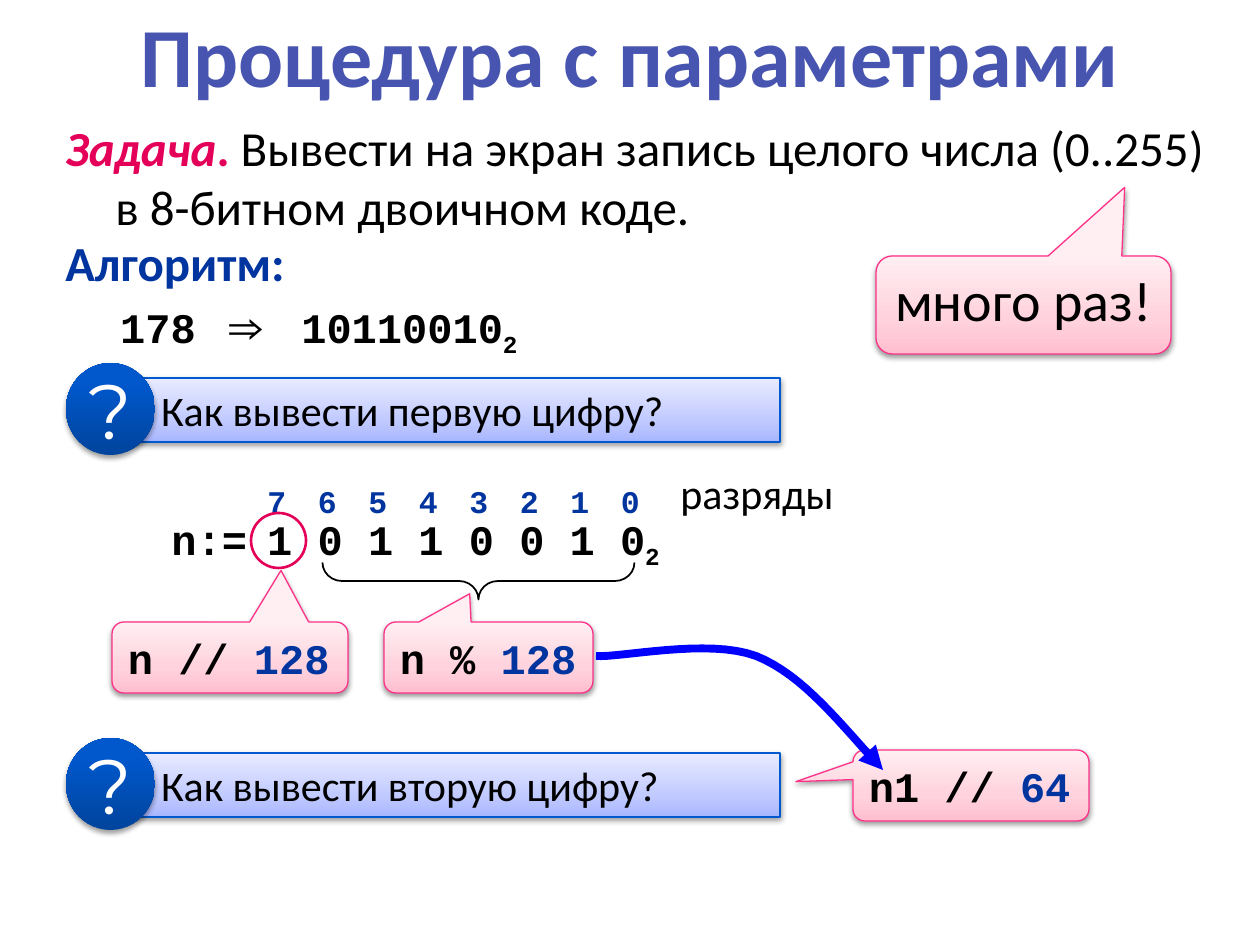
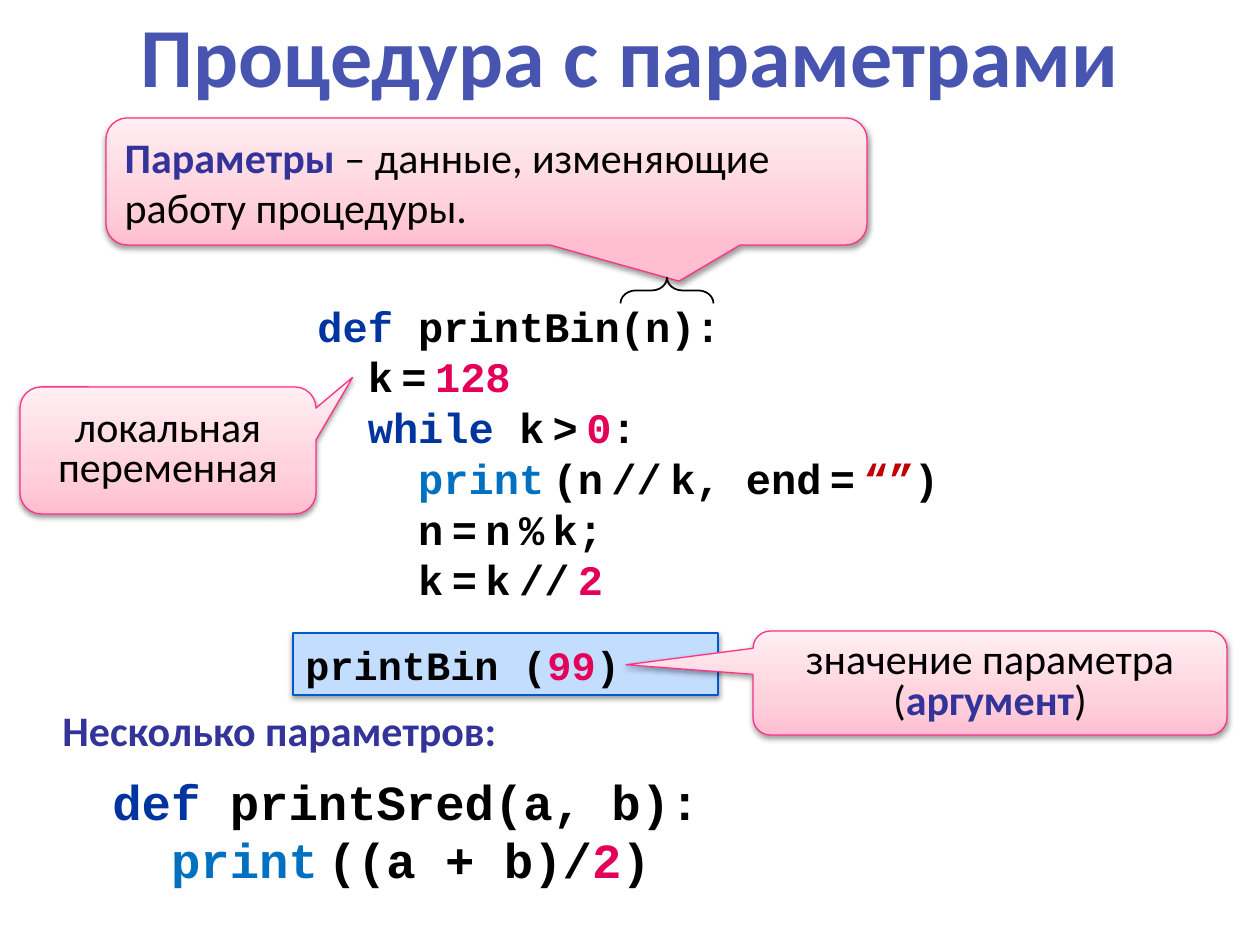
from dataclasses import dataclass

from lxml.etree import SubElement
from pptx import Presentation
from pptx.dml.color import RGBColor
from pptx.enum.shapes import MSO_SHAPE as Shape
from pptx.enum.text import MSO_ANCHOR as Anchor, MSO_AUTO_SIZE as AutoSize, PP_ALIGN as Align
from pptx.oxml.ns import qn
from pptx.util import Emu, Pt

EMU_PER_PX = 914400 / 126
TITLE = "Процедура с параметрами"


@dataclass(frozen=True)
class Theme:
    """Colours, gradients, fonts and type sizes shared by the slides."""
    title: str = "4855B0"
    ink: str = "000000"
    white: str = "FFFFFF"
    navy: str = "00349E"
    term: str = "333399"
    accent: str = "E40059"
    builtin: str = "0070C0"
    literal: str = "C00000"
    pink_edge: str = "FE3288"
    blue_edge: str = "0059CE"
    call_fill: str = "C3DDFF"
    arrow: str = "0000FF"
    pink: tuple = ((0, "FFBFD0"), (35, "FFD2DD"), (100, "FFEEF2"))
    lilac: tuple = ((0, "A8B6FF"), (35, "C2CBFF"), (100, "E8EBFF"))
    badge: tuple = ((0, "00449D"), (80, "0058CC"), (100, "0059CD"))
    sans: str = "Calibri"
    mono: str = "Courier New"
    badge_font: str = "Montserrat"
    heading_size: int = 48
    badge_size: int = 44
    shout_size: int = 32
    large: int = 28
    body: int = 24
    call_size: int = 23
    small: int = 18


T = Theme()
SANS = dict(name=T.sans, size=T.body, bold=False)
LARGE = {**SANS, "size": T.large}
MONO = dict(name=T.mono, size=T.body, bold=True)
BOLD = dict(bold=True)
SUBSCRIPT = dict(baseline=-25000)


def px(length):
    """Turn px into EMU."""
    return Emu(round(length * EMU_PER_PX))


def box(*lengths):
    """Turn left, top, width and height into EMU."""
    return [px(length) for length in lengths]


def add_run(paragraph, text, color, style):
    """Append one formatted run."""
    run = paragraph.add_run()
    run.text = text
    for key, value in style.items():
        if key == "baseline":
            run._r.get_or_add_rPr().set(key, str(value))
        else:
            setattr(run.font, key, Pt(value) if key == "size" else value)
    run.font.color.rgb = RGBColor.from_string(color)


def write(frame, lines, style, anchor=Anchor.TOP, wrap=True, indent=None, tabs=(), **layout):
    """Write lines of (text, colour, changes) runs; a tilde is a thin gap."""
    frame.word_wrap = wrap
    frame.auto_size = AutoSize.NONE
    frame.vertical_anchor = anchor
    for number, line in enumerate(lines):
        paragraph = frame.add_paragraph() if number else frame.paragraphs[0]
        for key, value in {"alignment": Align.LEFT, **layout}.items():
            setattr(paragraph, key, value)
        properties = paragraph._p.get_or_add_pPr()
        if indent:
            for key, value in zip(("marL", "indent"), indent):
                properties.set(key, str(px(value)))
        if tabs:
            stops = SubElement(properties, qn("a:tabLst"))
            for stop in tabs:
                SubElement(stops, qn("a:tab"), pos=str(px(stop)), algn="l")
        for text, color, *changes in line:
            run_style = {**style, **(changes[0] if changes else {})}
            for part, piece in enumerate(text.split("~")):
                if part:
                    add_run(paragraph, " ", color, {**run_style, "size": run_style["size"] / 3})
                if piece:
                    add_run(paragraph, piece, color, run_style)


def add_text(slide, place, lines, style, **layout):
    """Add a text box."""
    write(slide.shapes.add_textbox(*box(*place)).text_frame, lines, style, **layout)


def paint(shape, fill=None, edge=None, width=0.75, shadow=True):
    """Set fill (colour, gradient or none), line and soft shadow."""
    if fill is None:
        shape.fill.background()
    elif isinstance(fill, str):
        shape.fill.solid()
        shape.fill.fore_color.rgb = RGBColor.from_string(fill)
    else:
        shape.fill.gradient()
        gradient = shape._element.spPr.find(qn("a:gradFill"))
        stops = gradient.find(qn("a:gsLst"))
        for stop in list(stops):
            stops.remove(stop)
        for position, color in fill:
            stop = SubElement(stops, qn("a:gs"), pos=str(position * 1000))
            SubElement(stop, qn("a:srgbClr"), val=color)
        gradient.find(qn("a:lin")).set("ang", "16200000")
    if edge:
        shape.line.color.rgb = RGBColor.from_string(edge)
        shape.line.width = Pt(width)
    else:
        shape.line.fill.background()
    shape.shadow.inherit = False
    if shadow:
        effects = shape._element.spPr.find(qn("a:effectLst"))
        outer = SubElement(effects, qn("a:outerShdw"), blurRad=str(Pt(3.1)), dist=str(Pt(1.6)),
                           dir="5400000", rotWithShape="0")
        color = SubElement(outer, qn("a:srgbClr"), val=T.ink)
        SubElement(color, qn("a:alpha"), val="38000")


def add_callout(slide, place, tip, runs, style, **layout):
    """Add a pink speech callout whose tip is relative to its centre."""
    callout = slide.shapes.add_shape(Shape.ROUNDED_RECTANGULAR_CALLOUT, *box(*place))
    for index, value in enumerate((*tip, 0.167)):
        callout.adjustments[index] = value
    paint(callout, T.pink, T.pink_edge)
    write(callout.text_frame, [runs], style, anchor=Anchor.MIDDLE, **layout)


def add_question(slide, top, question):
    """Add a question bar with its round badge as a group."""
    group = slide.shapes.add_group_shape()
    bar = group.shapes.add_shape(Shape.RECTANGLE, *box(130, top + 15, 650, 64))
    paint(bar, T.lilac, T.blue_edge)
    bar.text_frame.margin_left = px(31)
    write(bar.text_frame, [[(question, T.ink)]], SANS, anchor=Anchor.MIDDLE)
    badge = group.shapes.add_shape(Shape.OVAL, *box(66, top, 89, 92))
    paint(badge, T.badge)
    write(badge.text_frame, [[("?", T.white)]], dict(name=T.badge_font, size=T.badge_size),
          anchor=Anchor.MIDDLE, wrap=False, alignment=Align.CENTER)


def add_brace(slide, place, rotation, curl):
    """Add a turned curly brace."""
    brace = slide.shapes.add_shape(Shape.LEFT_BRACE, *box(*place))
    brace.rotation = rotation
    brace.adjustments[0] = curl
    paint(brace, edge=T.ink, width=1, shadow=False)


def bezier(points, steps=16):
    """Return points along one cubic curve, without its start."""
    curve = []
    for step in range(1, steps + 1):
        t = step / steps
        weights = ((1 - t) ** 3, 3 * t * (1 - t) ** 2, 3 * t * t * (1 - t), t ** 3)
        curve.append(tuple(px(sum(w * p[axis] for w, p in zip(weights, points)))
                           for axis in (0, 1)))
    return curve


def add_curved_arrow(slide, points):
    """Draw joined cubic curves with an arrowhead at the first point."""
    builder = slide.shapes.build_freeform(*box(*points[0]))
    for start in range(0, len(points) - 1, 3):
        builder.add_line_segments(bezier(points[start:start + 4]), close=False)
    arrow = builder.convert_to_shape()
    paint(arrow, edge=T.arrow, width=4.5, shadow=False)
    SubElement(arrow.line._get_or_add_ln(), qn("a:headEnd"), type="triangle")


def add_titled_slide(deck):
    """Add a slide with the shared title."""
    slide = deck.slides.add_slide(deck.slide_layouts[5])
    title = slide.shapes.title
    for key, value in zip(("left", "top", "width", "height"), box(0, 0, 1260, 107)):
        setattr(title, key, value)
    write(title.text_frame, [[(TITLE, T.title)]], {**SANS, **BOLD, "size": T.heading_size},
          anchor=Anchor.MIDDLE, alignment=Align.CENTER)
    return slide


def build_algorithm(deck):
    """Build the slide on printing binary digits."""
    slide = add_titled_slide(deck)
    add_text(slide, (53, 111, 1168, 131), [[
        ("Задача", T.accent, dict(bold=True, italic=True)), (". ", T.accent, BOLD),
        ("Вывести на экран запись целого числа (0..255) в 8-битном двоичном коде.", T.ink),
    ]], LARGE, indent=(50, -50))
    add_callout(slide, (876, 256, 295, 98), (0.343, -1.2), [("много раз!", T.ink)],
                {**SANS, "size": T.shout_size}, wrap=False,
                alignment=Align.CENTER, line_spacing=0.8)
    add_text(slide, (53, 226, 247, 72), [[("Алгоритм:", T.navy)]], {**LARGE, **BOLD})
    for left, width, runs in (
        (107, 102, [("178", T.ink)]),
        (213, 67, [("⇒", T.ink)]),
        (282, 255, [("10110010", T.ink), ("2", T.ink, SUBSCRIPT)]),
    ):
        add_text(slide, (left, 295, width, 64), [runs], MONO, alignment=Align.CENTER)
    add_question(slide, 363, "Как вывести первую цифру?")
    add_text(slide, (255, 476, 408, 50), [[("\t".join("76543210"), T.navy)]],
             {**MONO, "size": T.small}, tabs=[50.5 * place for place in range(1, 8)])
    add_text(slide, (252, 507, 423, 64),
             [[(" ".join("10110010"), T.ink), ("2", T.ink, SUBSCRIPT)]],
             MONO, alignment=Align.CENTER)
    add_text(slide, (668, 461, 193, 64), [[("разряды", T.ink)]], SANS)
    add_text(slide, (159, 507, 102, 64), [[("n:=", T.ink)]], MONO)
    first_digit = slide.shapes.add_shape(Shape.OVAL, *box(251, 513, 55, 55))
    paint(first_digit, edge=T.accent, width=1.5, shadow=False)
    add_brace(slide, (460, 425, 37, 312), 270, 0.527)
    add_question(slide, 738, "Как вывести вторую цифру?")
    for place, tip, operation, divisor in (
        ((112, 622, 236, 71), (0.216, -1.227), "n // ", "128"),
        ((384, 622, 209, 71), (-0.09, -0.898), "n % ", "128"),
        ((853, 750, 236, 71), (-0.742, -0.054), "n1 // ", "64"),
    ):
        add_callout(slide, place, tip, [(operation, T.ink), (divisor, T.navy)], MONO, wrap=False)
    add_curved_arrow(slide, [(883, 770), (842, 726), (804, 675), (756, 656),
                             (708, 638), (620, 658), (596, 656)])


def build_parameters(deck):
    """Build the slide on parameters and arguments."""
    slide = add_titled_slide(deck)
    call = slide.shapes.add_shape(Shape.RECTANGLE, *box(293, 633, 425, 62))
    paint(call, T.call_fill, T.blue_edge)
    write(call.text_frame, [[("printBin (", T.ink), ("99", T.accent), (")", T.ink)]],
          {**MONO, "size": T.call_size}, anchor=Anchor.MIDDLE)
    add_callout(slide, (753, 631, 474, 104), (-0.768, -0.175), [
        ("значение параметра (", T.ink), ("аргумент", T.term, BOLD), (")", T.ink),
    ], SANS, alignment=Align.CENTER, line_spacing=0.8)
    add_text(slide, (293, 293, 771, 318), [
        [("def ", T.navy), ("printBin(n):", T.ink)],
        [("  k~=~", T.ink), ("128", T.accent)],
        [("  while ", T.navy), ("k~>~", T.ink), ("0", T.accent), (":", T.ink)],
        [("    print~", T.builtin), ("(n~//~k, end~=~", T.ink), ("“”", T.literal), (")", T.ink)],
        [("    n~=~n~%~k;", T.ink)],
        [("    k~=~k~//~", T.ink), ("2", T.accent)],
    ], MONO, anchor=Anchor.MIDDLE, indent=(25, -13), line_spacing=Pt(29))
    add_callout(slide, (106, 118, 761, 127), (0.253, 0.785), [
        ("Параметры", T.term, BOLD), (" – данные, изменяющие работу процедуры.", T.ink),
    ], SANS)
    add_brace(slide, (654, 244, 26, 93), 90, 0.586)
    add_callout(slide, (20, 387, 296, 127), (0.624, -0.576),
                [("локальная переменная", T.ink)], SANS,
                alignment=Align.CENTER, line_spacing=0.8)
    add_text(slide, (100, 765, 698, 131), [
        [("def ", T.navy), ("printSred(a, b):", T.ink)],
        [("  print~", T.builtin), ("((a + b)/", T.ink), ("2", T.accent), (")", T.ink)],
    ], {**MONO, "size": T.large}, anchor=Anchor.MIDDLE, line_spacing=Pt(33))
    add_text(slide, (50, 698, 525, 64), [[("Несколько параметров:", T.term)]], {**SANS, **BOLD})


def main():
    """Build and save the deck."""
    deck = Presentation()
    deck.slide_width, deck.slide_height = box(1260, 945)
    build_algorithm(deck)
    build_parameters(deck)
    deck.save("out.pptx")


if __name__ == "__main__":
    main()
